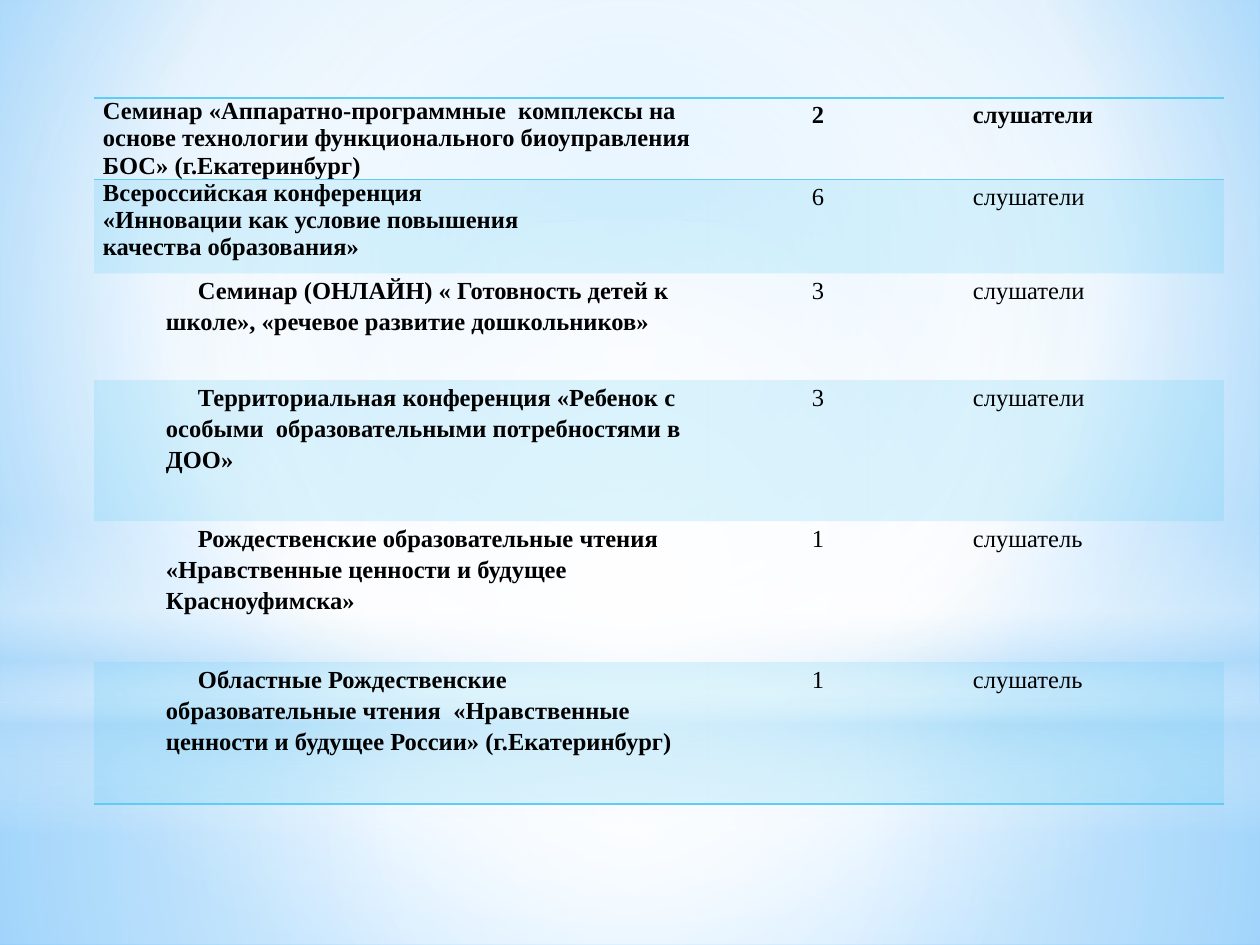
from dataclasses import dataclass

from lxml.etree import SubElement
from pptx import Presentation
from pptx.dml.color import RGBColor
from pptx.enum.shapes import MSO_SHAPE as Shape
from pptx.oxml import parse_xml
from pptx.oxml.ns import nsdecls, qn
from pptx.util import Emu, Pt

PX = 914400 / 126
COLORS = {
    "black": "000000",
    "white": "FFFFFF",
    "accent": "5ECCF3",
    "haze": "B4DCFA",
    "sky": "9ED5FF",
    "deep": "5BB9FF",
}
FONT = "Times New Roman"
NO_STYLE = "{2D5ABB26-0587-4C30-8999-92F81FD0307C}"


@dataclass
class Stop:
    percent: int
    color: str
    opacity: int = 100


@dataclass
class Layer:
    shape: Shape
    top: int
    height: int
    stops: list[Stop]
    linear: bool = False


@dataclass
class Event:
    height: int
    lines: list[str]
    count: str
    role: str
    indented: bool = True
    heading: bool = False


BACKGROUND = [Stop(0, "sky"), Stop(60, "white"), Stop(100, "deep")]
LAYERS = [
    Layer(Shape.RECTANGLE, 703, 242,
          [Stop(0, "white", 91), Stop(37, "white", 76), Stop(100, "haze", 79)]),
    Layer(Shape.RECTANGLE, 0, 703,
          [Stop(0, "white", 89), Stop(48, "white", 62), Stop(100, "haze", 79)]),
    Layer(Shape.RECTANGLE, 519, 315,
          [Stop(0, "white", 0), Stop(29, "white", 30), Stop(45, "haze", 40),
           Stop(55, "white", 26), Stop(65, "haze", 60), Stop(100, "white", 0)],
          linear=True),
    Layer(Shape.OVAL, 220, 703, [Stop(0, "white"), Stop(56, "white", 0)]),
]

COLUMNS = [614, 161, 355]
EVENTS = [
    Event(77, ["Семинар «Аппаратно-программные  комплексы на основе технологии "
               "функционального биоуправления БОС» (г.Екатеринбург)"],
          "2", "слушатели", indented=False, heading=True),
    Event(94, ["Всероссийская конференция", "«Инновации как условие повышения",
               "качества образования»"], "6", "слушатели", indented=False),
    Event(107, ["Семинар (ОНЛАЙН) « Готовность детей к школе», "
                "«речевое развитие дошкольников»"], "3", "слушатели"),
    Event(141, ["Территориальная конференция «Ребенок с особыми  "
                "образовательными потребностями в ДОО»"], "3", "слушатели"),
    Event(141, ["Рождественские образовательные чтения  «Нравственные ценности "
                "и будущее Красноуфимска»"], "1", "слушатель"),
    Event(142, ["Областные Рождественские образовательные чтения  «Нравственные "
                "ценности и будущее России» (г.Екатеринбург)"], "1", "слушатель"),
]


def px(length: int) -> Emu:
    return Emu(round(length * PX))


def set_gradient(parent, stops: list[Stop], direction: str) -> None:
    """Swap the solid fill of an element for a gradient."""
    stop_xml = "".join(
        f'<a:gs pos="{stop.percent * 1000}"><a:srgbClr val="{COLORS[stop.color]}">'
        f'<a:alpha val="{stop.opacity * 1000}"/></a:srgbClr></a:gs>'
        for stop in stops)
    gradient = parse_xml(f'<a:gradFill {nsdecls("a")} rotWithShape="1">'
                         f"<a:gsLst>{stop_xml}</a:gsLst>{direction}</a:gradFill>")
    parent.replace(parent.find(qn("a:solidFill")), gradient)


def circle(left: int, top: int, right: int, bottom: int) -> str:
    return (f'<a:path path="circle"><a:fillToRect l="{left * 1000}" t="{top * 1000}" '
            f'r="{right * 1000}" b="{bottom * 1000}"/></a:path>')


def draw_layer(page, layer: Layer) -> None:
    box = page.shapes.add_shape(layer.shape, 0, px(layer.top), px(1260), px(layer.height))
    box.shadow.inherit = False
    box.line.fill.background()
    box.fill.solid()
    direction = '<a:lin ang="5400000" scaled="0"/>' if layer.linear else circle(50, 50, 50, 50)
    set_gradient(box.element.spPr, layer.stops, direction)


def write_cell(cell, lines: list[str], bold: bool, indented: bool) -> None:
    cell.margin_left = cell.margin_right = px(9)
    cell.margin_top = cell.margin_bottom = 0
    frame = cell.text_frame
    for index, line in enumerate(lines):
        para = frame.add_paragraph() if index else frame.paragraphs[0]
        if indented:
            para.line_spacing = 1.15
            properties = para._p.get_or_add_pPr()
            properties.set("marL", str(px(63)))
            properties.set("indent", str(px(32)))
        span = para.add_run()
        span.text = line
        span.font.name = FONT
        span.font.size = Pt(14)
        span.font.bold = bold
        span.font.color.rgb = RGBColor.from_string(COLORS["black"])


def paint_cell(cell, banded: bool, borders: list[str]) -> None:
    if banded:
        cell.fill.solid()
        cell.fill.fore_color.rgb = RGBColor.from_string(COLORS["accent"])
    else:
        cell.fill.background()
    properties = cell._tc.get_or_add_tcPr()
    if banded:
        color = properties.find(qn("a:solidFill")).find(qn("a:srgbClr"))
        SubElement(color, qn("a:alpha")).set("val", "20000")
    for position, side in enumerate(borders):
        properties.insert(position, parse_xml(
            f'<a:{side} {nsdecls("a")} w="12700"><a:solidFill>'
            f'<a:srgbClr val="{COLORS["accent"]}"/></a:solidFill></a:{side}>'))


def draw_table(page, events: list[Event]) -> None:
    frame = page.shapes.add_table(len(events), len(COLUMNS), px(94), px(98),
                                  px(sum(COLUMNS)), px(sum(event.height for event in events)))
    table = frame.table
    table.first_row = table.horz_banding = False
    table._tbl.tblPr.find(qn("a:tableStyleId")).text = NO_STYLE
    for column, width in zip(table.columns, COLUMNS):
        column.width = px(width)
    for index, event in enumerate(events):
        row = table.rows[index]
        row.height = px(event.height)
        borders = ["lnT", "lnB"] if event.heading else []
        if index == len(events) - 1:
            borders = ["lnB"]
        name, count, role = row.cells
        write_cell(name, event.lines, True, event.indented)
        write_cell(count, [event.count], event.heading, True)
        write_cell(role, [event.role], event.heading, True)
        for cell in (name, count, role):
            paint_cell(cell, index % 2 == 1, borders)


def main() -> None:
    deck = Presentation()
    deck.slide_width, deck.slide_height = px(1260), px(945)
    page = deck.slides.add_slide(deck.slide_layouts[6])

    # Sky background with soft light layers
    page.background.fill.solid()
    set_gradient(page.element.find(".//" + qn("p:bgPr")), BACKGROUND, circle(20, 10, 20, 60))
    for layer in LAYERS:
        draw_layer(page, layer)

    # Events attended
    draw_table(page, EVENTS)
    deck.save("out.pptx")


if __name__ == "__main__":
    main()
